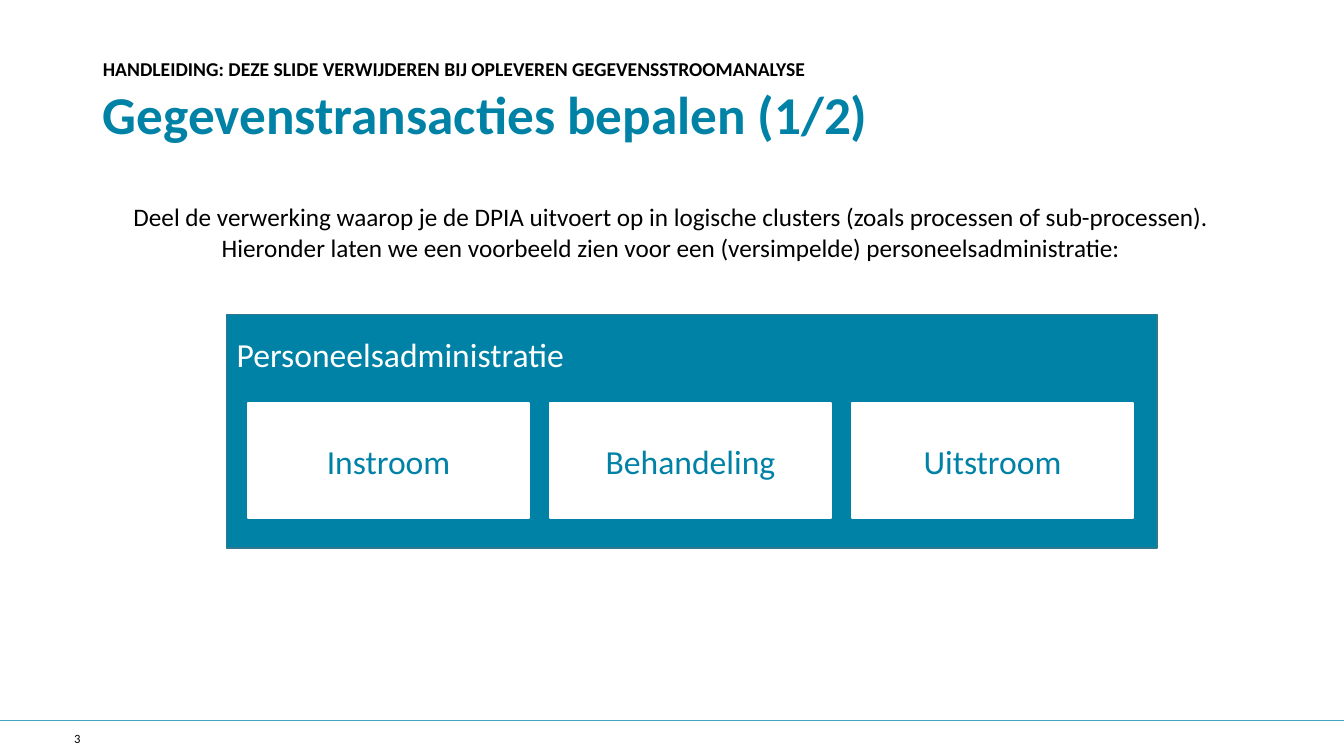
from pptx import Presentation
from pptx.dml.color import RGBColor
from pptx.enum.shapes import MSO_CONNECTOR as Conn, MSO_SHAPE as Shape
from pptx.enum.text import MSO_ANCHOR as Anchor, PP_ALIGN as Align
from pptx.util import Pt
from lxml import etree

TEAL, WHITE, BLACK = "0082A6", "FFFFFF", "000000"
NS = "http://schemas.openxmlformats.org/drawingml/2006/main"
WIDTH, HEIGHT = 960, 540
LEFT, SPAN = 73.5, 811.5
STAGES = ["Instroom", "Behandeling", "Uitstroom"]


def color(target, code):
    target.rgb = RGBColor.from_string(code)


def assign(target, values):
    for name, value in values.items():
        setattr(target, name, value)


def write(item, text, size, code, bold=False, align=Align.LEFT, **frame):
    """Set the text of a shape; frame holds text frame settings."""
    body = item.text_frame
    assign(body, {"word_wrap": True, **frame})
    para = body.paragraphs[0]
    para.alignment = align
    run = para.add_run()
    run.text = text
    assign(run.font, {"name": "Calibri", "size": Pt(size), "bold": bold})
    color(run.font.color, code)


def label(slide, area, text, size, code, **style):
    """Add a text box without insets."""
    box = slide.shapes.add_textbox(*map(Pt, area))
    sides = ("left", "top", "right", "bottom")
    insets = {f"margin_{side}": 0 for side in sides}
    write(box, text, size, code, **insets, **style)


def block(slide, area, text, fill, edge, code, **style):
    rect = slide.shapes.add_shape(Shape.RECTANGLE, *map(Pt, area))
    rect.shadow.inherit = False
    rect.fill.solid()
    color(rect.fill.fore_color, fill)
    color(rect.line.color, edge)
    rect.line.width = Pt(1)
    write(rect, text, 24, code, **style)


def rule(slide, y, code):
    """Draw a line across the full slide."""
    line = slide.shapes.add_connector(Conn.STRAIGHT, 0, Pt(y), Pt(WIDTH), Pt(y))
    color(line.line.color, code)
    line.line.width = Pt(1)
    etree.SubElement(line._element.spPr, f"{{{NS}}}effectLst")


def main():
    deck = Presentation()
    assign(deck, {"slide_width": Pt(WIDTH), "slide_height": Pt(HEIGHT)})
    slide = deck.slides.add_slide(deck.slide_layouts[6])

    rule(slide, 514.8, "3FA3C1")
    label(slide, (LEFT, 144, SPAN, 348.5),
          "Deel de verwerking waarop je de DPIA uitvoert op in logische "
          "clusters (zoals processen of sub-processen). Hieronder laten we "
          "een voorbeeld zien voor een (versimpelde) personeelsadministratie:",
          18, BLACK, align=Align.CENTER)
    label(slide, (7.2, 519.1, 50.4, 17.3), "3", 9, BLACK,
          align=Align.RIGHT, vertical_anchor=Anchor.MIDDLE)
    label(slide, (LEFT, 41, SPAN, 13.7),
          "HANDLEIDING: DEZE SLIDE VERWIJDEREN BIJ OPLEVEREN "
          "GEGEVENSSTROOMANALYSE", 14, BLACK, bold=True)
    label(slide, (LEFT, 58.3, SPAN, 42.5),
          "Gegevenstransacties bepalen (1/2)", 38, TEAL, bold=True)

    block(slide, (162, 224.6, 664.6, 167), "Personeelsadministratie",
          TEAL, "2F798F", WHITE, vertical_anchor=Anchor.TOP, margin_top=Pt(14))
    for i, stage in enumerate(STAGES):
        block(slide, (177.1 + i * 215.7, 288, 200.9, 82.1), stage,
              WHITE, WHITE, TEAL, align=Align.CENTER,
              vertical_anchor=Anchor.MIDDLE)

    deck.save("out.pptx")


if __name__ == "__main__":
    main()
